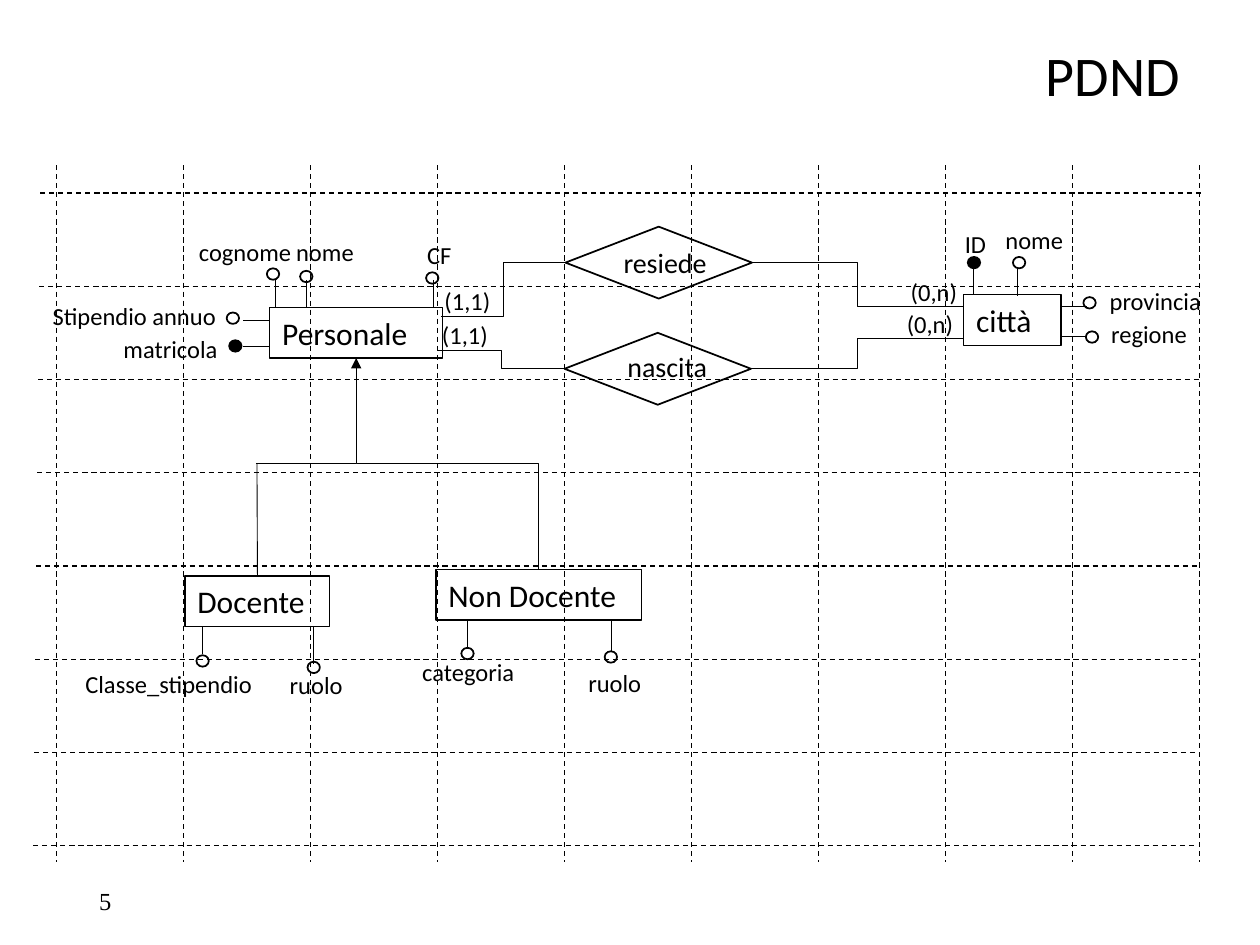
import pptx
import pptx.util
import pptx.dml.color
import pptx.enum.dml
import pptx.enum.shapes
import pptx.enum.text
import pptx.oxml.ns
import pptx.oxml.xmlchemy

Cm, Pt = pptx.util.Cm, pptx.util.Pt
Kind = pptx.enum.shapes.MSO_SHAPE
Wire = pptx.enum.shapes.MSO_CONNECTOR
Align = pptx.enum.text.PP_ALIGN
Anchor = pptx.enum.text.MSO_ANCHOR
Element = pptx.oxml.xmlchemy.OxmlElement

COLORS = {"ink": "000000"}
TOP, LEFT, BOTTOM, RIGHT = range(4)

# All lengths are in cm.
# name: left, top, width
ENTITIES = {
    "Personale": (5.44, 6.2, 3.48),
    "città": (19.43, 5.94, 1.96),
    "Docente": (3.73, 11.61, 2.92),
    "Non Docente": (8.79, 11.48, 4.14),
}
# name: diamond left, top, label left, top
RELATIONS = {
    "resiede": (11.4, 4.57, 12.32, 4.83),
    "nascita": (11.38, 6.71, 12.4, 6.93),
}
# relation, its side, far end x, y
LINKS = [
    ("resiede", LEFT, 8.89, 6.38),
    ("nascita", LEFT, 8.84, 7.06),
    ("resiede", RIGHT, 19.43, 6.17),
    ("nascita", RIGHT, 19.43, 6.83),
]
# text, label (left, top, width), dot (left, top), stem (from, to), is key
ATTRS = [
    ("cognome", (3.76, 4.65, 2.46), (5.38, 5.41), (5.56, 5.64, 5.56, 6.2), False),
    ("nome", (5.72, 4.65, 1.93), (6.05, 5.46), (6.17, 5.64, 6.17, 6.2), False),
    ("CF", (8.36, 4.72, 1.14), (8.59, 5.49), (8.74, 5.64, 8.74, 6.2), False),
    ("Stipendio annuo", (0.81, 5.94, 3.96), (4.57, 6.3), (4.9, 6.45, 5.44, 6.45), False),
    ("matricola", (2.24, 6.6, 2.46), (4.62, 6.86), (4.9, 6.99, 5.44, 6.99), True),
    ("ID", (19.2, 4.5, 1.6), (19.51, 5.18), (19.63, 5.38, 19.63, 5.94), True),
    ("nome", (20.02, 4.42, 2.46), (20.42, 5.18), (20.52, 5.41, 20.52, 5.97), False),
    ("provincia", (22.12, 5.64, 2.46), (21.84, 5.99), (21.39, 6.17, 21.92, 6.17), False),
    ("regione", (22.15, 6.3, 2.46), (21.89, 6.68), (21.39, 6.78, 21.92, 6.78), False),
    ("Classe_stipendio", (1.47, 13.36, 4.06), (3.96, 13.21), (4.09, 12.62, 4.09, 13.18), False),
    ("ruolo", (5.59, 13.39, 1.6), (6.2, 13.34), (6.32, 12.62, 6.32, 13.39), False),
    ("categoria", (8.26, 13.13, 2.59), (9.3, 13.06), (9.42, 12.52, 9.42, 13.08), False),
    ("ruolo", (11.61, 13.34, 1.6), (12.19, 13.13), (12.32, 12.5, 12.32, 13.13), False),
]
CARDS = [("(1,1)", 8.71, 5.64), ("(1,1)", 8.66, 6.32),
         ("(0,n)", 18.11, 5.46), ("(0,n)", 18.03, 6.1)]

deck = pptx.Presentation()
deck.slide_width, deck.slide_height = Cm(25.4), Cm(19.05)
slide = deck.slides.add_slide(deck.slide_layouts[6])
shapes = slide.shapes
ink = pptx.dml.color.RGBColor.from_string(COLORS["ink"])


def write(shape, text, size, face="Calibri", anchor=Anchor.TOP, align=Align.LEFT):
    frame = shape.text_frame
    frame.word_wrap = True
    frame.vertical_anchor = anchor
    frame.text = text
    para = frame.paragraphs[0]
    para.alignment = align
    para.font.size, para.font.name = Pt(size), face
    para.font.color.rgb = ink
    return para


def label(text, left, top, width, height, size, **style):
    box = shapes.add_textbox(Cm(left), Cm(top), Cm(width), Cm(height))
    return write(box, text, size, **style)


def outline(kind, left, top, width, height, weight, solid=False):
    shape = shapes.add_shape(kind, Cm(left), Cm(top), Cm(width), Cm(height))
    shape.shadow.inherit = False
    if solid:
        shape.fill.solid()
        shape.fill.fore_color.rgb = ink
    else:
        shape.fill.background()
    shape.line.color.rgb = ink
    shape.line.width = Pt(weight)
    return shape


def wire(x1, y1, x2, y2, kind=Wire.STRAIGHT, weight=0.5):
    line = shapes.add_connector(kind, Cm(x1), Cm(y1), Cm(x2), Cm(y2))
    line.line.color.rgb = ink
    line.line.width = Pt(weight)
    line._element.spPr.append(Element("a:effectLst"))
    return line


def upright(line):
    """Turn an elbow that runs up and left so its end legs are vertical."""
    wide, high = line.width, line.height
    line.left += (wide - high) // 2
    line.top += (high - wide) // 2
    line.width, line.height = high, wide
    xfrm = line._element.spPr.find(pptx.oxml.ns.qn("a:xfrm"))
    xfrm.set("rot", "16200000")
    xfrm.set("flipH", "0")
    xfrm.set("flipV", "1")


def arrow(line):
    tip = Element("a:tailEnd")
    tip.set("type", "triangle")
    line.line._get_or_add_ln().append(tip)


title = label("PDND", 19.96, 0.56, 4.95, 2.03, 32, anchor=Anchor.MIDDLE, align=Align.CENTER)
title.line_spacing = 0.9
label("5", 1.75, 17.65, 5.72, 1.02, 14, face="Times New Roman", anchor=Anchor.MIDDLE)

rows = [(0.81 - 0.02 * i, 3.89 + 1.88 * i, 24.21 - 0.02 * i, 3.89 + 1.88 * i) for i in range(8)]
cols = [(1.14 + 2.56 * i, 3.33, 1.14 + 2.56 * i, 17.37) for i in range(10)]
for ends in rows + cols:
    wire(*ends, weight=0.75).line.dash_style = pptx.enum.dml.MSO_LINE.DASH

nodes = {}
for name, (left, top, width) in ENTITIES.items():
    nodes[name] = outline(Kind.RECTANGLE, left, top, width, 1.02, 0.75)
    write(nodes[name], name, 18)
for name, (left, top, textx, texty) in RELATIONS.items():
    nodes[name] = outline(Kind.DIAMOND, left, top, 3.76, 1.45, 1)
    label(name, textx, texty, 2.62, 0.94, 16)

# Generalisation: both kinds of staff lead up to Personale.
tree = wire(10.86, 11.48, 7.18, 7.22, Wire.ELBOW)
tree.begin_connect(nodes["Non Docente"], TOP)
tree.end_connect(nodes["Personale"], BOTTOM)
upright(tree)
arrow(tree)
wire(5.19, 11.61, 5.18, 9.35).begin_connect(nodes["Docente"], TOP)
wire(5.16, 9.35, 7.18, 9.35)

for name, side, x, y in LINKS:
    if side == LEFT:
        wire(x, y, 11.4, 5.3, Wire.ELBOW).end_connect(nodes[name], side)
    else:
        wire(15.16, 5.3, x, y, Wire.ELBOW).begin_connect(nodes[name], side)

for text, place, dot, stem, key in ATTRS:
    wire(*stem)
    outline(Kind.OVAL, *dot, 0.25, 0.23, 1, solid=key)
    label(text, *place, 0.86, 14)
for text, left, top in CARDS:
    label(text, left, top, 1.47, 0.86, 14)

deck.save("out.pptx")
